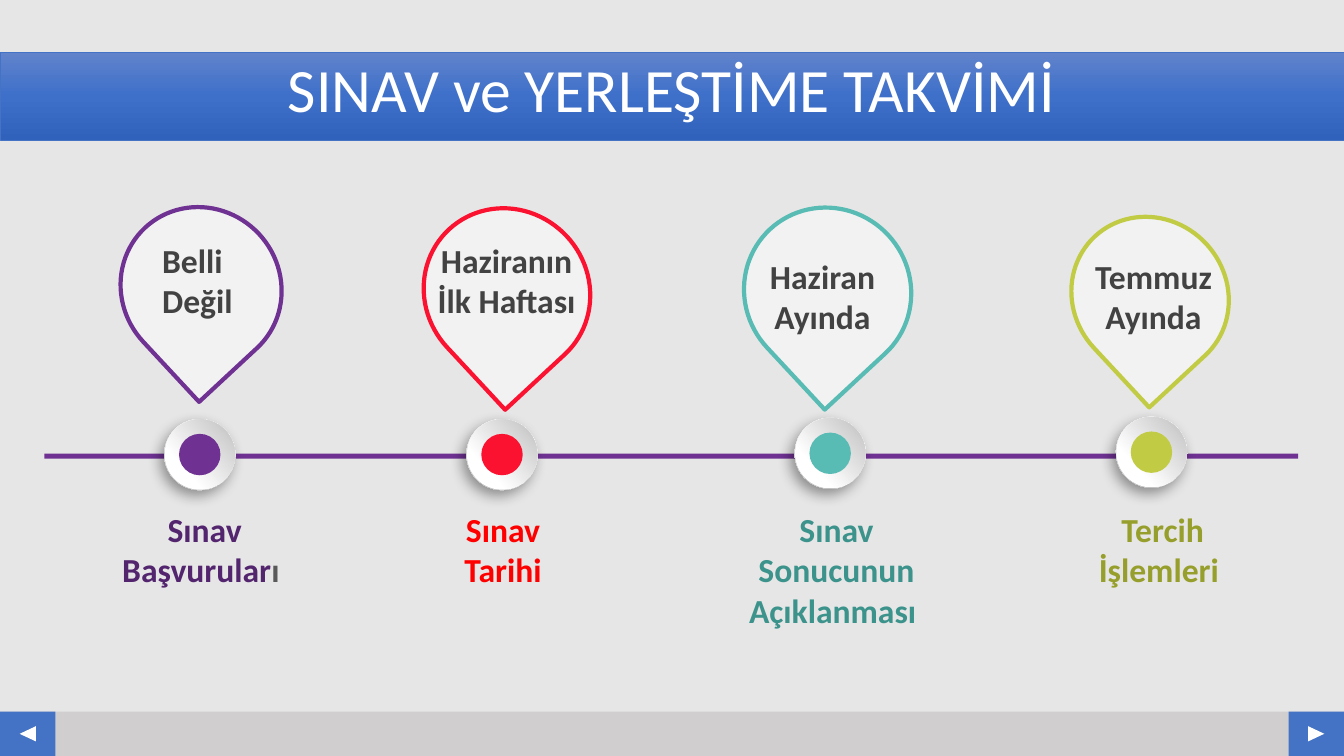
"""Build the exam and placement calendar slide."""
from dataclasses import dataclass

from lxml import etree
from pptx import Presentation
from pptx.dml.color import RGBColor
from pptx.enum.shapes import MSO_SHAPE
from pptx.enum.text import MSO_ANCHOR, MSO_AUTO_SIZE, PP_ALIGN
from pptx.oxml.ns import qn
from pptx.shapes.autoshape import Shape
from pptx.slide import Slide
from pptx.text.text import _Paragraph
from pptx.util import Pt

RECT, OVAL = MSO_SHAPE.RECTANGLE, MSO_SHAPE.OVAL
DROP, ARROW = MSO_SHAPE.TEAR, MSO_SHAPE.ISOSCELES_TRIANGLE
LEFT, MID = PP_ALIGN.LEFT, PP_ALIGN.CENTER
CORE_ROW = MSO_ANCHOR.MIDDLE
GROW = MSO_AUTO_SIZE.SHAPE_TO_FIT_TEXT
FONT = "Calibri"
WIDE, HIGH = 960, 540
FOOT = 31.7
KNOB, CORE = 50.8, 29.6

HUES = {
    "back": "E7E6E6", "foot": "D0CECE", "blue": "4472C4", "white": "FFFFFF",
    "pale": "F2F2F2", "ink": "424242", "gray": "595959",
    "plum": "6F3293", "red": "FA1230", "teal": "58BBB4", "lime": "C2CB44",
    "plum text": "53256E", "red text": "FF0000",
    "teal text": "3C938C", "lime text": "979F2C",
    "band top": "6183CB", "band mid": "3E70CA", "band low": "3062BB",
    "rim": "B8B8B8", "dish": "BFBFBF", "black": "000000",
}
BAND = ((0, "band top"), (50, "band mid"), (100, "band low"))
OUTER = ((17, "white"), (88, "rim"))
INNER = ((29, "white"), (98, "dish"))


@dataclass(frozen=True)
class Box:
    x: float
    y: float
    w: float
    h: float


@dataclass(frozen=True)
class Stage:
    hue: str
    knob: tuple[float, float]
    drop: Box
    date: Box
    lines: tuple[str, ...]
    align: PP_ALIGN
    note: Box
    words: tuple[tuple[str, str], ...]


STAGES = (
    Stage("plum", (142.7, 324.7), Box(87.1, 146.9, 113, 117.4),
          Box(108.7, 167.8, 65.5, 65.5), ("Belli", "Değil"), LEFT,
          Box(77.8, 360, 136.8, 65.5),
          (("Sınav Başvurular", "plum text"), ("ı ", "gray"))),
    Stage("red", (358.6, 324.7), Box(303.8, 147.6, 116.6, 121.7),
          Box(304.6, 167.8, 114.5, 65.5), ("Haziranın", "İlk Haftası"), MID,
          Box(298.8, 360, 121, 65.5), (("Sınav Tarihi", "red text"),)),
    Stage("teal", (593, 323.8), Box(532.1, 147.6, 118.1, 121),
          Box(542.2, 179.3, 90.7, 65.5), ("Haziran", "Ayında"), MID,
          Box(519.8, 360, 155.5, 94.3),
          (("Sınav Sonucunun Açıklanması ", "teal text"),)),
    Stage("lime", (822.5, 323), Box(766.8, 153.4, 109.4, 115.9),
          Box(774.7, 179.3, 98.6, 65.5), ("Temmuz", "Ayında"), MID,
          Box(774.7, 360, 111.6, 65.5), (("Tercih İşlemleri ", "lime text"),)),
)


def tint(hue: str) -> RGBColor:
    return RGBColor.from_string(HUES[hue])


def draw(slide: Slide, kind: MSO_SHAPE, box: Box, hue: str = "",
         edge: str = "", width: float = 0, turn: float = 0) -> Shape:
    shape = slide.shapes.add_shape(
        kind, Pt(box.x), Pt(box.y), Pt(box.w), Pt(box.h))
    shape.shadow.inherit = False
    shape.rotation = turn
    if hue:
        shape.fill.solid()
        shape.fill.fore_color.rgb = tint(hue)
    if edge:
        shape.line.color.rgb = tint(edge)
        shape.line.width = Pt(width)
    else:
        shape.line.fill.background()
    return shape


def blend(shape: Shape, stops: tuple[tuple[int, str], ...], angle: float) -> None:
    shape.fill.gradient()
    shape.fill.gradient_angle = 360 - angle
    items = shape.element.spPr.find(".//" + qn("a:gsLst"))
    for old in list(items):
        items.remove(old)
    for spot, hue in stops:
        stop = etree.SubElement(items, qn("a:gs"), pos=str(spot * 1000))
        etree.SubElement(stop, qn("a:srgbClr"), val=HUES[hue])


def shade(shape: Shape) -> None:
    effects = shape.element.spPr.find(qn("a:effectLst"))
    cast = etree.SubElement(
        effects, qn("a:outerShdw"), blurRad=str(Pt(10)), dist=str(Pt(5)),
        dir=str(123 * 60000), algn="ctr", rotWithShape="0")
    color = etree.SubElement(cast, qn("a:srgbClr"), val=HUES["black"])
    etree.SubElement(color, qn("a:alpha"), val="39000")


def write(para: _Paragraph, text: str, hue: str, size: float, bold: bool) -> None:
    run = para.add_run()
    run.text = text
    run.font.name = FONT
    run.font.size = Pt(size)
    run.font.bold = bold
    run.font.color.rgb = tint(hue)


def label(slide: Slide, box: Box, rows: tuple[tuple[tuple[str, str], ...], ...],
          align: PP_ALIGN, wrap: bool) -> None:
    frame = slide.shapes.add_textbox(
        Pt(box.x), Pt(box.y), Pt(box.w), Pt(box.h)).text_frame
    frame.word_wrap = wrap
    frame.auto_size = GROW
    for i, row in enumerate(rows):
        para = frame.add_paragraph() if i else frame.paragraphs[0]
        para.alignment = align
        for text, hue in row:
            write(para, text, hue, 24, True)


def footer(slide: Slide) -> None:
    top = HIGH - FOOT
    draw(slide, RECT, Box(0, top, WIDE, FOOT), "foot")
    for x, turn in ((0, 270), (WIDE - 39.6, 90)):
        draw(slide, RECT, Box(x, top, 39.6, FOOT), "blue")
        draw(slide, ARROW, Box(x + 14.4, top + 10.1, 10.8, 11.5), "white", turn=turn)


def title(slide: Slide) -> None:
    band = draw(slide, RECT, Box(0, 37.4, WIDE, 62.6), edge="blue", width=0.5)
    blend(band, BAND, 90)
    frame = band.text_frame
    frame.vertical_anchor = CORE_ROW
    frame.margin_bottom = Pt(8)
    para = frame.paragraphs[0]
    para.alignment = MID
    para.line_spacing = 0.9
    write(para, "SINAV ve YERLEŞTİME TAKVİMİ", "white", 44, False)


def disc(x: float, y: float, size: float) -> Box:
    return Box(x - size / 2, y - size / 2, size, size)


def knob(slide: Slide, stage: Stage) -> None:
    x, y = stage.knob
    rim = draw(slide, OVAL, disc(x, y, KNOB), turn=62.3)
    blend(rim, OUTER, 45)
    shade(rim)
    blend(draw(slide, OVAL, disc(x, y, KNOB - 0.6), turn=273), INNER, 45)
    draw(slide, OVAL, disc(x, y, CORE), stage.hue)


def main() -> None:
    deck = Presentation()
    deck.slide_width, deck.slide_height = Pt(WIDE), Pt(HIGH)
    slide = deck.slides.add_slide(deck.slide_layouts[6])
    slide.background.fill.solid()
    slide.background.fill.fore_color.rgb = tint("back")
    footer(slide)
    title(slide)
    draw(slide, RECT, Box(31.7, 324, 895.7, 3.6), "plum")
    for stage in STAGES:
        knob(slide, stage)
        draw(slide, DROP, stage.drop, "pale", stage.hue, 3, 137.1)
        rows = tuple(((line, "ink"),) for line in stage.lines)
        label(slide, stage.date, rows, stage.align, False)
        label(slide, stage.note, (stage.words,), MID, True)
    deck.save("out.pptx")


if __name__ == "__main__":
    main()
